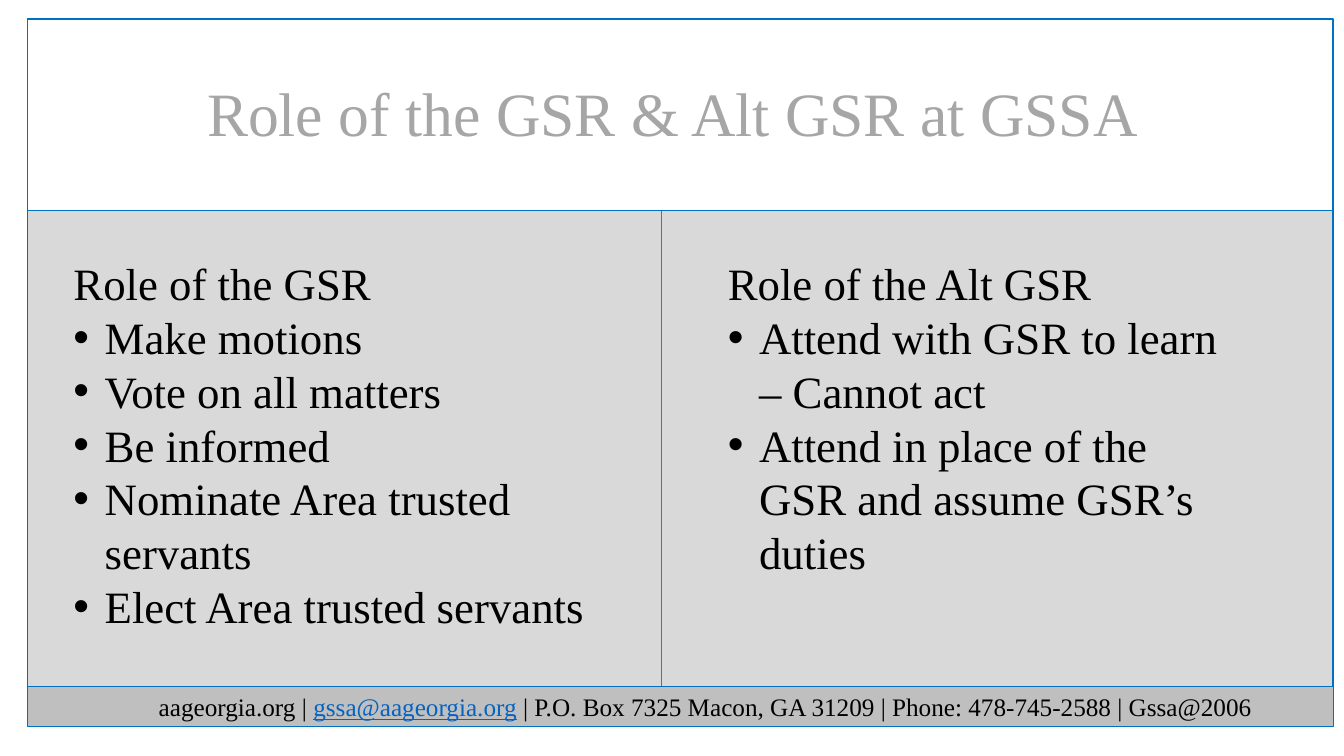
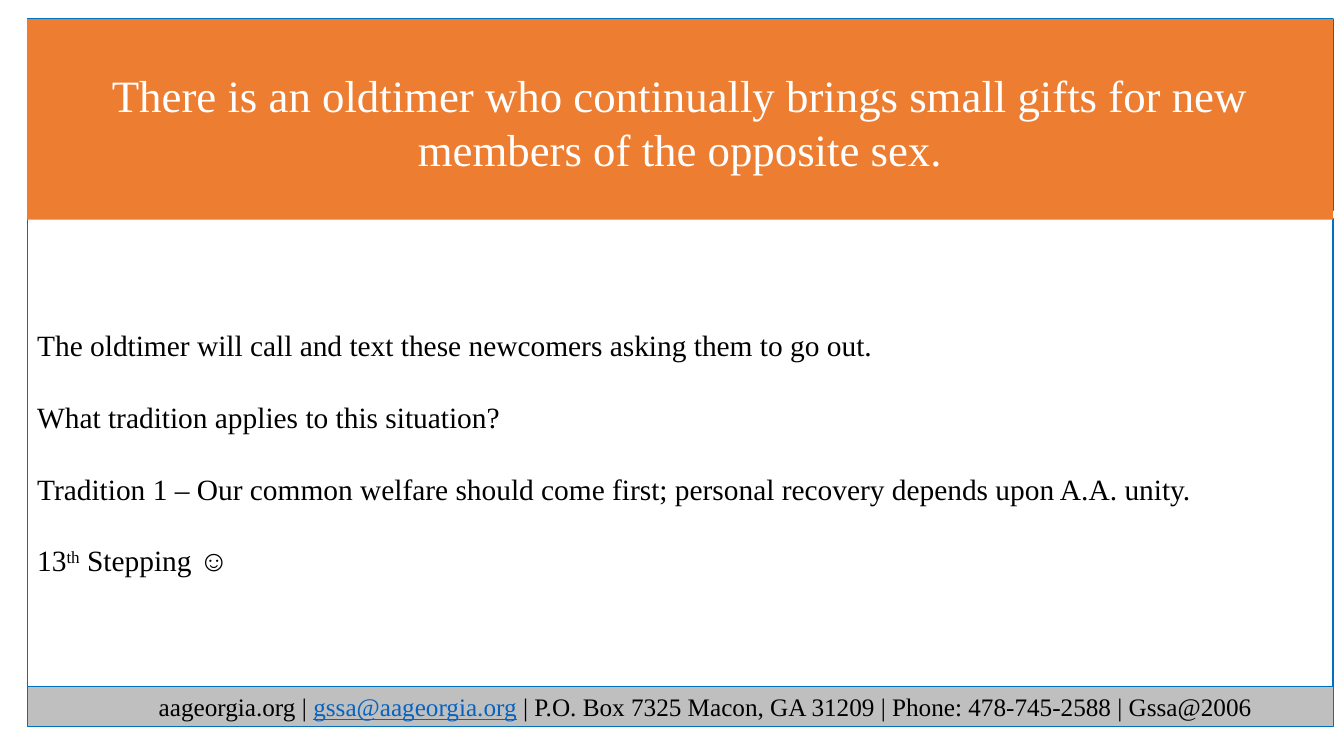
from dataclasses import dataclass

from lxml import etree
from pptx import Presentation
from pptx import util as u
from pptx.dml.color import RGBColor
from pptx.enum import shapes, text
from pptx.oxml.ns import qn

PX = 9144  # EMU per px, 100 px to the inch


@dataclass(frozen=True)
class Theme:
    font: str = "Times New Roman"
    ink: str = "000000"
    white: str = "FFFFFF"
    title_grey: str = "A6A6A6"
    panel: str = "D9D9D9"
    footer: str = "BFBFBF"
    frame: str = "0070C0"
    divider: str = "4472C4"
    link: str = "0563C1"
    accent: str = "ED7D31"
    title_size: int = 44
    large_size: int = 32
    body_size: int = 21
    footer_size: int = 18


THEME = Theme()
SLIDE = (1333, 750)
LEFT, WIDTH = 27, 1295
HEADER = (LEFT, 19, WIDTH, 190)
PANEL_TOP, FOOTER_TOP = 209, 681
DIVIDER_X = 656
BULLET_INDENT = 31

# A paragraph is a list of (text, span format) pairs.
FOOTER = [
    ("aageorgia.org | ", {}),
    ("gssa@aageorgia.org", {"color": THEME.link, "underline": True}),
    (" | P.O. Box 7325 Macon, GA 31209 | Phone: 478-745-2588 | Gssa@2006", {}),
]
ROLES_TITLE = "Role of the GSR & Alt GSR at GSSA"
ROLES = [
    ((63, 249, 558, 387), "Role of the GSR", [
        "Make motions",
        "Vote on all matters",
        "Be informed",
        "Nominate Area trusted servants",
        "Elect Area trusted servants",
    ]),
    ((712, 249, 521, 333), "Role of the Alt GSR", [
        "Attend with GSR to learn – Cannot act",
        "Attend in place of the GSR and assume GSR’s duties",
    ]),
]
SITUATION = ("There is an oldtimer who continually brings small gifts "
             "for new members of the opposite sex.")
DISCUSSION = [
    [("The oldtimer will call and text these newcomers asking them to go out.", {})],
    [("What tradition applies to this situation?", {})],
    [("Tradition 1 – Our common welfare should come first; "
      "personal recovery depends upon A.A. unity.", {})],
    [("13", {}), ("th", {"raised": True}), (" Stepping ☺", {})],
]


def emu(*lengths):
    return [u.Emu(length * PX) for length in lengths]


def rgb(color):
    return RGBColor.from_string(color)


def add_panel(page, place, fill=None, line=None, weight=1):
    panel = page.shapes.add_shape(shapes.MSO_SHAPE.RECTANGLE, *emu(*place))
    panel.shadow.inherit = False
    if fill:
        panel.fill.solid()
        panel.fill.fore_color.rgb = rgb(fill)
    else:
        panel.fill.background()
    if line:
        panel.line.color.rgb = rgb(line)
        panel.line.width = u.Pt(weight)
    else:
        panel.line.fill.background()
    return panel


def add_text(page, place, paragraphs, size, **options):
    write(page.shapes.add_textbox(*emu(*place)), paragraphs, size, **options)


def write(box, paragraphs, size, color=THEME.ink, align=text.PP_ALIGN.LEFT,
          anchor=text.MSO_ANCHOR.TOP, gap=0, indent=0, bullets_from=None, top_inset=5):
    """Fill a box with paragraphs; those from index bullets_from on get bullets."""
    frame = box.text_frame
    left, top, right, bottom = emu(10, top_inset, 10, 5)
    settings = {"word_wrap": True, "vertical_anchor": anchor, "margin_left": left,
                "margin_top": top, "margin_right": right, "margin_bottom": bottom}
    for name, value in settings.items():
        setattr(frame, name, value)
    for index, spans in enumerate(paragraphs):
        para = frame.add_paragraph() if index else frame.paragraphs[0]
        para.alignment = align
        if index and gap:
            para.space_before = u.Pt(gap)
        if indent:
            para._p.get_or_add_pPr().set("marL", str(indent * PX))
        if bullets_from is not None and index >= bullets_from:
            add_bullet(para)
        for words, style in spans:
            add_span(para, words, size, style.get("color", color), style)


def add_bullet(para):
    properties = para._p.get_or_add_pPr()
    properties.set("marL", str(BULLET_INDENT * PX))
    properties.set("indent", str(-BULLET_INDENT * PX))
    etree.SubElement(properties, qn("a:buFont"), typeface="Arial")
    etree.SubElement(properties, qn("a:buChar"), char="•")


def add_span(para, words, size, color, style):
    span = para.add_run()
    span.text = words
    formats = {"name": THEME.font, "size": u.Pt(size),
               "underline": style.get("underline", False)}
    for name, value in formats.items():
        setattr(span.font, name, value)
    span.font.color.rgb = rgb(color)
    if style.get("raised"):
        span._r.get_or_add_rPr().set("baseline", "30000")


def add_divider(page, x, top, bottom):
    divider = page.shapes.add_connector(shapes.MSO_CONNECTOR.STRAIGHT,
                                        *emu(x, top, x, bottom))
    divider.line.color.rgb = rgb(THEME.divider)
    divider.line.width = u.Pt(0.5)
    etree.SubElement(divider._element.spPr, qn("a:effectLst"))


def add_page(deck, panel_top, panel_fill):
    """Add a page with footer, main panel and header frame; return page and panel."""
    page = deck.slides.add_slide(deck.slide_layouts[6])
    footer = add_panel(page, (LEFT, FOOTER_TOP, WIDTH, 40),
                       THEME.footer, THEME.frame, 0.5)
    write(footer, [FOOTER], THEME.footer_size,
          align=text.PP_ALIGN.CENTER, indent=50)
    panel = add_panel(page, (LEFT, panel_top, WIDTH, FOOTER_TOP - panel_top),
                      panel_fill, THEME.frame)
    add_panel(page, HEADER, line=THEME.frame)
    return page, panel


def build_roles(deck):
    page, _ = add_page(deck, PANEL_TOP, THEME.panel)
    add_text(page, (77, 69, 1181, 84), [[(ROLES_TITLE, {})]], THEME.title_size,
             color=THEME.title_grey, align=text.PP_ALIGN.CENTER)
    for place, heading, duties in ROLES:
        lines = [[(line, {})] for line in [heading, *duties]]
        add_text(page, place, lines, THEME.large_size, bullets_from=1)
    add_divider(page, DIVIDER_X, PANEL_TOP, FOOTER_TOP)


def build_situation(deck):
    page, panel = add_page(deck, 217, THEME.white)
    write(panel, DISCUSSION, THEME.body_size,
          anchor=text.MSO_ANCHOR.MIDDLE, gap=26)
    banner = add_panel(page, (LEFT, 19, WIDTH, 199), THEME.accent)
    write(banner, [[(SITUATION, {})]], THEME.large_size, color=THEME.white,
          align=text.PP_ALIGN.CENTER, anchor=text.MSO_ANCHOR.MIDDLE, top_inset=9)


def main():
    deck = Presentation()
    deck.slide_width, deck.slide_height = emu(*SLIDE)
    build_roles(deck)
    build_situation(deck)
    deck.save("out.pptx")


if __name__ == "__main__":
    main()
